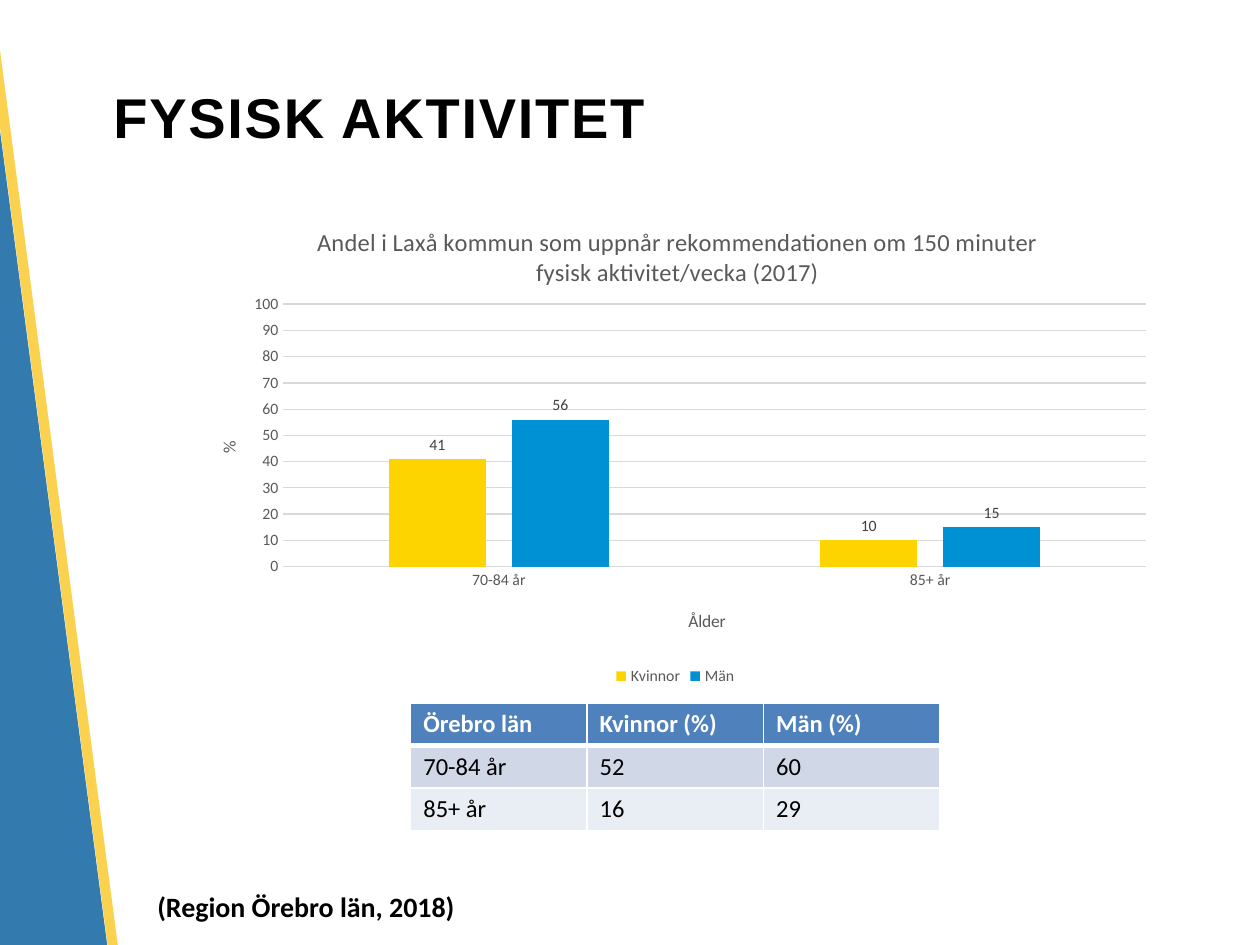
"""Build the slide on physical activity with a column chart and a county table."""
from dataclasses import dataclass

from lxml import etree
from pptx import Presentation
from pptx.chart.data import CategoryChartData
from pptx.dml.color import RGBColor
from pptx.enum.chart import XL_CHART_TYPE, XL_LABEL_POSITION, XL_LEGEND_POSITION, XL_TICK_MARK
from pptx.enum.shapes import MSO_SHAPE
from pptx.enum.text import MSO_ANCHOR, PP_ALIGN
from pptx.oxml import parse_xml
from pptx.oxml.ns import nsdecls, qn
from pptx.util import Inches, Pt

COLUMNS = XL_CHART_TYPE.COLUMN_CLUSTERED
OUTSIDE = XL_LABEL_POSITION.OUTSIDE_END
BOTTOM = XL_LEGEND_POSITION.BOTTOM
NO_TICK = XL_TICK_MARK.NONE
RECTANGLE = MSO_SHAPE.RECTANGLE
MIDDLE = MSO_ANCHOR.MIDDLE
LEFT = PP_ALIGN.LEFT

BLACK = RGBColor(0x00, 0x00, 0x00)
WHITE = RGBColor(0xFF, 0xFF, 0xFF)
STRIPE_BLUE = RGBColor(0x00, 0x5B, 0x9C)
STRIPE_YELLOW = RGBColor(0xFA, 0xC8, 0x28)
HEADER_BLUE = RGBColor(0x4F, 0x81, 0xBD)
BAND_DARK = RGBColor(0xD0, 0xD8, 0xE8)
BAND_LIGHT = RGBColor(0xE9, 0xED, 0xF4)
WOMEN_YELLOW = RGBColor(0xFD, 0xD4, 0x00)
MEN_BLUE = RGBColor(0x00, 0x90, 0xD4)
AXIS_GREY = RGBColor(0x59, 0x59, 0x59)
LABEL_GREY = RGBColor(0x40, 0x40, 0x40)
GRID_GREY = RGBColor(0xD9, 0xD9, 0xD9)

SLIDE_W, SLIDE_H = Inches(10), Inches(7.5)
GRID_COLS, GRID_ROWS = 100, 75
BODY_FONT = "Calibri"


@dataclass(frozen=True)
class Box:
    """A rectangle in columns and rows of the slide grid."""
    col: float
    row: float
    cols: float
    rows: float

    def emu(self) -> tuple[int, int, int, int]:
        """Return left, top, width and height in EMU."""
        unit_w, unit_h = SLIDE_W / GRID_COLS, SLIDE_H / GRID_ROWS
        return (round(self.col * unit_w), round(self.row * unit_h),
                round(self.cols * unit_w), round(self.rows * unit_h))


@dataclass(frozen=True)
class Stripe:
    """A slanted stripe at the left edge."""
    box: Box
    color: RGBColor
    opacity: int


@dataclass(frozen=True)
class Series:
    """One group of people in the chart."""
    name: str
    values: tuple[int, ...]
    color: RGBColor


STRIPES = (
    Stripe(Box(-5.2, -16.4, 9.1, 113.3), STRIPE_BLUE, 80),
    Stripe(Box(3.8, -17.7, 0.8, 113.2), STRIPE_YELLOW, 81),
)
STRIPE_ROTATION = 352.5
TITLE_BOX = Box(8, 3, 86.5, 12.5)
CHART_BOX = Box(14.7, 15.5, 77.8, 39.3)
TABLE_BOX = Box(32.6, 55.8, 42, 10.1)
SOURCE_BOX = Box(11.5, 70.1, 27.2, 3.7)
CHART_TITLE = ("Andel i Laxå kommun som uppnår rekommendationen om 150 minuter "
               "fysisk aktivitet/vecka (2017)")
AGES = ("70-84 år", "85+ år")
SERIES = (Series("Kvinnor", (41, 10), WOMEN_YELLOW), Series("Män", (56, 15), MEN_BLUE))
TABLE_ROWS = (
    ("Örebro län", "Kvinnor (%)", "Män (%)"),
    ("70-84 år", "52", "60"),
    ("85+ år", "16", "29"),
)
ROW_FILLS = (HEADER_BLUE, BAND_DARK, BAND_LIGHT)


def style_font(font, size: float, color: RGBColor, bold: bool = False, name: str = BODY_FONT) -> None:
    """Set name, size, weight and colour of a font."""
    font.name, font.size, font.bold = name, Pt(size), bold
    font.color.rgb = color


def add_stripe(s, stripe: Stripe) -> None:
    """Draw a rotated, slightly transparent stripe."""
    sp = s.shapes.add_shape(RECTANGLE, *stripe.box.emu())
    sp.rotation = STRIPE_ROTATION
    sp.shadow.inherit = False
    sp.line.fill.background()
    sp.fill.solid()
    sp.fill.fore_color.rgb = stripe.color
    color = sp.fill._xPr.find(".//" + qn("a:srgbClr"))
    etree.SubElement(color, qn("a:alpha"), val=str(stripe.opacity * 1000))


def set_title(s, text: str) -> None:
    """Place and format the title placeholder."""
    title = s.shapes.title
    title.left, title.top, title.width, title.height = TITLE_BOX.emu()
    tf = title.text_frame
    tf.text = text
    tf.vertical_anchor = MIDDLE
    p = tf.paragraphs[0]
    p.alignment = LEFT
    style_font(p.runs[0].font, 32, BLACK, True, "Arial")
    p.runs[0].font._element.set("spc", "100")


def place_part(element, **shares: float) -> None:
    """Give a chart part a manual layout in shares of the chart."""
    old = element.find(qn("c:layout"))
    if old is not None:
        element.remove(old)
    modes = {"layoutTarget": "inner"} if "w" in shares else {}
    modes |= {"xMode": "edge", "yMode": "edge"}
    items = "".join(f'<c:{key} val="{value}"/>' for key, value in (modes | shares).items())
    layout = parse_xml(f'<c:layout {nsdecls("c")}><c:manualLayout>{items}</c:manualLayout></c:layout>')
    text = element.find(qn("c:tx"))
    if text is None:
        element.insert(0, layout)
    else:
        text.addnext(layout)


def set_chart_title(title, text: str, size: float, x: float, y: float) -> None:
    """Write, format and place a chart or axis title."""
    title.text_frame.text = text
    style_font(title.text_frame.paragraphs[0].runs[0].font, size, AXIS_GREY)
    place_part(title._element, x=x, y=y)


def style_axis(axis) -> None:
    """Format what both axes share."""
    axis.major_tick_mark = axis.minor_tick_mark = NO_TICK
    style_font(axis.tick_labels.font, 9, AXIS_GREY)


def add_activity_chart(s) -> None:
    """Draw the clustered column chart."""
    data = CategoryChartData()
    data.categories = AGES
    for group in SERIES:
        data.add_series(group.name, group.values)
    chart = s.shapes.add_chart(COLUMNS, *CHART_BOX.emu(), data).chart
    style_font(chart.font, 10, BLACK)
    chart.has_title = True
    set_chart_title(chart.chart_title, CHART_TITLE, 14, 0.13, 0.05)
    chart.has_legend = True
    chart.legend.position = BOTTOM
    chart.legend.include_in_layout = False
    style_font(chart.legend.font, 9, AXIS_GREY)

    ages, share = chart.category_axis, chart.value_axis
    style_axis(ages)
    style_axis(share)
    set_chart_title(ages.axis_title, "Ålder", 10, 0.51, 0.83)
    set_chart_title(share.axis_title, "%", 10, 0.03, 0.49)
    share.axis_title.text_frame._txBody.bodyPr.set("rot", "-5400000")
    share.minimum_scale, share.maximum_scale, share.major_unit = 0, 100, 10
    share.format.line.fill.background()
    for line in (ages.format.line, share.major_gridlines.format.line):
        line.color.rgb = GRID_GREY
        line.width = Pt(0.75)

    plot = chart.plots[0]
    plot.gap_width, plot.overlap, plot.vary_by_categories = 219, -27, False
    for series, group in zip(plot.series, SERIES):
        series.format.fill.solid()
        series.format.fill.fore_color.rgb = group.color
        labels = series.data_labels
        labels.show_value, labels.position = True, OUTSIDE
        style_font(labels.font, 9, LABEL_GREY)
    place_part(plot._element.getparent(), x=0.1, y=0.22, w=0.88, h=0.53)


def set_borders(cell, top: float, bottom: float) -> None:
    """Give a cell white borders with widths in points."""
    for side, width in (("L", 1), ("R", 1), ("T", top), ("B", bottom)):
        cell._tc.get_or_add_tcPr().append(parse_xml(
            f'<a:ln{side} {nsdecls("a")} w="{Pt(width)}"><a:solidFill>'
            f'<a:srgbClr val="{WHITE}"/></a:solidFill></a:ln{side}>'))


def add_county_table(s) -> None:
    """Draw the table of county values."""
    table = s.shapes.add_table(len(TABLE_ROWS), len(TABLE_ROWS[0]), *TABLE_BOX.emu()).table
    for i, (texts, fill) in enumerate(zip(TABLE_ROWS, ROW_FILLS)):
        header = i == 0
        for j, text in enumerate(texts):
            cell = table.cell(i, j)
            set_borders(cell, 3 if i == 1 else 1, 3 if header else 1)
            cell.fill.solid()
            cell.fill.fore_color.rgb = fill
            cell.text_frame.text = text
            r = cell.text_frame.paragraphs[0].runs[0]
            style_font(r.font, 14, WHITE if header else BLACK, header)


def add_source(s, text: str) -> None:
    """Write the source line."""
    tf = s.shapes.add_textbox(*SOURCE_BOX.emu()).text_frame
    tf.word_wrap = True
    tf.text = text
    style_font(tf.paragraphs[0].runs[0].font, 16, BLACK, True)


def main() -> None:
    """Build and save the slide."""
    prs = Presentation()
    prs.slide_width, prs.slide_height = SLIDE_W, SLIDE_H
    s = prs.slides.add_slide(prs.slide_layouts[5])
    for stripe in STRIPES:
        add_stripe(s, stripe)
    set_title(s, "FYSISK AKTIVITET")
    add_county_table(s)
    add_source(s, "(Region Örebro län, 2018)")
    add_activity_chart(s)
    prs.save("out.pptx")


if __name__ == "__main__":
    main()
